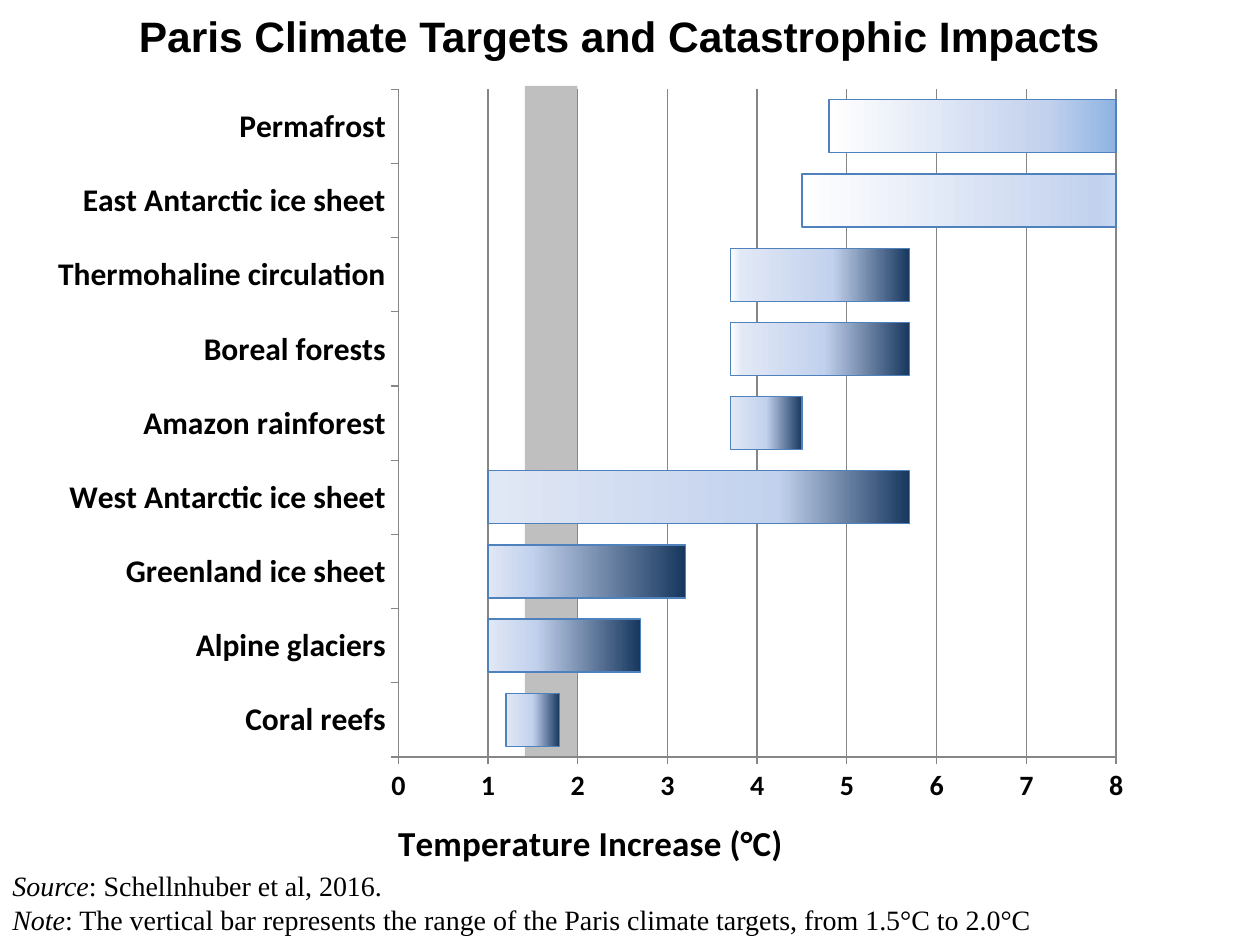
"""Build a slide with a floating bar chart of climate tipping points."""
from lxml import etree
from pptx import Presentation
from pptx import util as u
from pptx.chart.data import CategoryChartData
from pptx.dml.color import RGBColor
from pptx.enum import chart as charts, shapes, text
from pptx.oxml import parse_xml
from pptx.oxml.ns import nsdecls, qn

TITLE = "Paris Climate Targets and Catastrophic Impacts"
AXIS_TITLE = "Temperature Increase (°C)"
NOTES = [
    ("Source", ": Schellnhuber et al, 2016."),
    ("Note", ": The vertical bar represents the range of the Paris climate targets, from 1.5°C to 2.0°C"),
]


def dark_stops(middle):
    return [(0, "17375E"), (middle, "C2D1ED"), (100, "E1E8F5")]


def faded_stops(middle, pale):
    return [(0, "17375E"), (middle, "C2D1ED"), (pale, "E1E8F6"), (100, "FFFFFF")]


def light_stops(start, middle):
    return [(0, start), (middle, "C2D1ED"), (100, "FFFFFF")]


IMPACTS = [
    ("Coral reefs", 1.2, 0.6, None),
    ("Alpine glaciers", 1, 1.7, dark_stops(69)),
    ("Greenland ice sheet", 1, 2.2, dark_stops(78)),
    ("West Antarctic ice sheet", 1, 4.7, dark_stops(31)),
    ("Amazon rainforest", 3.7, 0.8, None),
    ("Boreal forests", 3.7, 2, faded_stops(48, 93)),
    ("Thermohaline circulation", 3.7, 2, faded_stops(43, 94)),
    ("East Antarctic ice sheet", 4.5, 3.5, light_stops("C6D9F1", 6)),
    ("Permafrost", 4.8, 3.2, light_stops("8EB4E3", 24)),
]
PLOT_LAYOUT = {"x": 0.339, "y": 0.026, "w": 0.645, "h": 0.826}


def color(hex_value):
    return RGBColor.from_string(hex_value)


def style_font(font, size, name, bold=False, italic=False):
    font.size, font.name = u.Pt(size), name
    font.bold, font.italic = bold, italic
    font.color.rgb = color("000000")


def style_line(line, hex_value):
    line.color.rgb = color(hex_value)
    line.width = u.Pt(0.75)


def fill_gradient(chart_format, element, stops):
    chart_format.fill.gradient()
    chart_format.fill.gradient_angle = 180
    stop_list = element.get_or_add_spPr().find(".//" + qn("a:gsLst"))
    for stop in list(stop_list):
        stop_list.remove(stop)
    for position, hex_value in stops:
        stop = etree.SubElement(stop_list, qn("a:gs"), pos=str(position * 1000))
        etree.SubElement(stop, qn("a:srgbClr"), val=hex_value)
    style_line(chart_format.line, "4F81BD")


def set_plot_layout(plot_area):
    for layout in plot_area.findall(qn("c:layout")):
        plot_area.remove(layout)
    layout = etree.Element(qn("c:layout"))
    manual = etree.SubElement(layout, qn("c:manualLayout"))
    settings = {"layoutTarget": "inner", "xMode": "edge", "yMode": "edge", **PLOT_LAYOUT}
    for name, value in settings.items():
        etree.SubElement(manual, qn("c:" + name), val=str(value))
    plot_area.insert(0, layout)


def no_fill():
    return parse_xml(
        f'<c:spPr {nsdecls("c", "a")}><a:noFill/><a:ln><a:noFill/></a:ln></c:spPr>'
    )


def add_title(slide):
    title = slide.shapes.title
    title.left, title.top, title.width, title.height = map(u.Pt, (30, 2, 648, 36))
    title.text_frame.vertical_anchor = text.MSO_ANCHOR.MIDDLE
    paragraph = title.text_frame.paragraphs[0]
    paragraph.alignment = text.PP_ALIGN.CENTER
    run = paragraph.add_run()
    run.text = TITLE
    style_font(run.font, 24.3, "Arial", bold=True)


def add_target_band(slide):
    band = slide.shapes.add_shape(
        shapes.MSO_SHAPE.RECTANGLE, *map(u.Pt, (300, 49, 30, 384))
    )
    band.shadow.inherit = False
    band.fill.solid()
    band.fill.fore_color.rgb = color("BFBFBF")
    band.line.fill.background()


def add_impact_chart(slide):
    names, starts, ranges, gradients = zip(*IMPACTS)
    data = CategoryChartData()
    data.categories = names
    data.add_series("Series 1", starts)
    data.add_series("Series 2", ranges)
    frame = slide.shapes.add_chart(
        charts.XL_CHART_TYPE.BAR_STACKED, *map(u.Pt, (12, 39, 636, 462)), data
    )
    chart = frame.chart
    chart.has_title = chart.has_legend = False
    style_font(chart.font, 10, "Calibri")
    plot = chart.plots[0]
    plot.gap_width, plot.overlap = 40, 100
    plot.vary_by_categories = False

    offset, bars = plot.series
    offset.format.fill.background()
    offset.format.line.fill.background()
    fill_gradient(bars.format, bars._element, dark_stops(50))
    for index, stops in enumerate(gradients):
        if stops:
            element = bars._element.get_or_add_dPt_for_point(index)
            fill_gradient(bars.points[index].format, element, stops)

    for axis, size in ((chart.category_axis, 18), (chart.value_axis, 16)):
        style_font(axis.tick_labels.font, size, "Calibri", bold=True)
        axis.major_tick_mark = charts.XL_TICK_MARK.OUTSIDE
        axis.minor_tick_mark = charts.XL_TICK_MARK.NONE
        style_line(axis.format.line, "868686")
    values = chart.value_axis
    values.minimum_scale, values.maximum_scale, values.major_unit = 0, 8, 1
    values.has_major_gridlines = True
    style_line(values.major_gridlines.format.line, "868686")
    run = values.axis_title.text_frame.paragraphs[0].add_run()
    run.text = AXIS_TITLE
    style_font(run.font, 20, "Calibri", bold=True)

    chart_space = chart._chartSpace
    plot_area = chart_space.chart.plotArea
    set_plot_layout(plot_area)
    plot_area.append(no_fill())
    chart_space.chart.addnext(no_fill())


def add_notes(slide):
    box = slide.shapes.add_textbox(*map(u.Pt, (0, 493, 636, 46)))
    frame = box.text_frame
    frame.word_wrap = True
    for index, parts in enumerate(NOTES):
        paragraph = frame.add_paragraph() if index else frame.paragraphs[0]
        for part, italic in zip(parts, (True, False)):
            run = paragraph.add_run()
            run.text = part
            style_font(run.font, 16, "Times New Roman", italic=italic)


def main():
    presentation = Presentation()
    presentation.slide_width, presentation.slide_height = u.Pt(720), u.Pt(540)
    slide = presentation.slides.add_slide(presentation.slide_layouts[5])
    add_target_band(slide)
    add_impact_chart(slide)
    add_title(slide)
    add_notes(slide)
    presentation.save("out.pptx")


if __name__ == "__main__":
    main()
